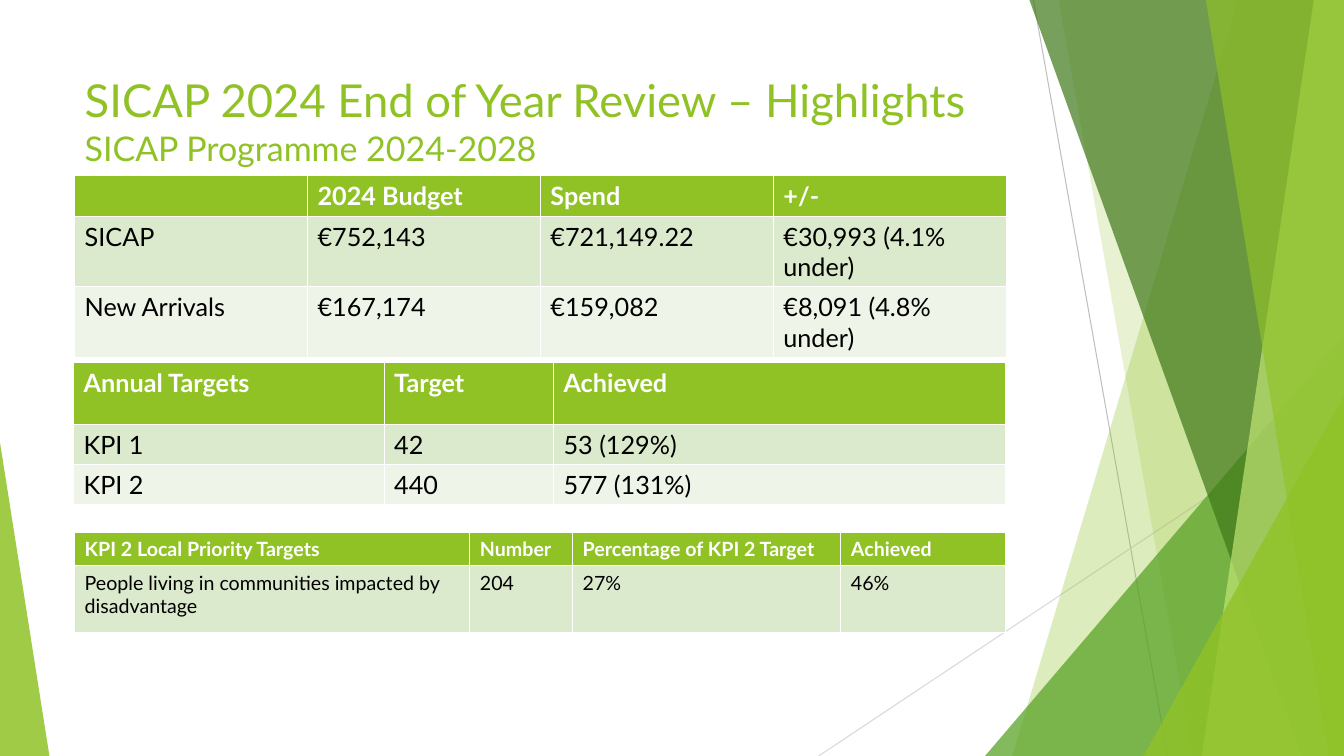
from dataclasses import dataclass

from lxml import etree
from pptx import Presentation
from pptx.dml.color import RGBColor
from pptx.enum import shapes, text
from pptx.oxml import ns
from pptx.util import Inches, Pt


@dataclass(frozen=True)
class Theme:
    font: str = "Lato"
    lime: str = "90C226"
    green: str = "54A021"
    forest: str = "3F7819"
    pale_lime: str = "C0E474"
    band_dark: str = "DBE9CD"
    band_light: str = "EEF4E8"
    white: str = "FFFFFF"
    black: str = "000000"
    dark_ray: str = "BFBFBF"
    light_ray: str = "D9D9D9"
    title_size: float = 32.4
    subtitle_size: float = 24.3
    table_size: float = 18
    small_table_size: float = 14
    ray_width: float = 0.75


THEME = Theme()
WIDTH, HEIGHT = 13.33, 7.5


def rgb(colour):
    return RGBColor.from_string(colour)


def style_run(run, size, colour, bold=False):
    run.font.name = THEME.font
    run.font.size = Pt(size)
    run.font.bold = bold
    run.font.color.rgb = rgb(colour)


def add_ray(slide, start, end, colour):
    ray = slide.shapes.add_connector(
        shapes.MSO_CONNECTOR.STRAIGHT, *map(Inches, start + end))
    ray.line.color.rgb = rgb(colour)
    ray.line.width = Pt(THEME.ray_width)
    etree.SubElement(ray.element.spPr, ns.qn("a:effectLst"))


def paint_glass(pane, colour, opacity):
    pane.shadow.inherit = False
    pane.line.fill.background()
    pane.fill.solid()
    pane.fill.fore_color.rgb = rgb(colour)
    tint = pane.element.spPr.find(ns.qn("a:solidFill"))[0]
    etree.SubElement(tint, ns.qn("a:alpha"), val=str(opacity * 1000))


def add_pane(slide, top_left, bottom_left, colour, opacity):
    corners = [(top_left, 0), (WIDTH, 0), (WIDTH, HEIGHT), (bottom_left, HEIGHT)]
    points = [(Inches(x), Inches(y)) for x, y in corners]
    outline = slide.shapes.build_freeform(*points[0])
    outline.add_line_segments(points[1:], close=True)
    paint_glass(outline.convert_to_shape(), colour, opacity)


def add_wedge(slide, left, top, width, apex, colour, opacity):
    wedge = slide.shapes.add_shape(
        shapes.MSO_SHAPE.ISOSCELES_TRIANGLE,
        Inches(left), Inches(top), Inches(width), Inches(HEIGHT - top))
    wedge.adjustments[0] = apex
    paint_glass(wedge, colour, opacity)


def add_facets(slide):
    add_ray(slide, (10.25, 0), (11.58, HEIGHT), THEME.dark_ray)
    add_ray(slide, (WIDTH, 4.03), (8.12, HEIGHT), THEME.light_ray)
    add_pane(slide, 12.28, 10.04, THEME.lime, 30)
    add_pane(slide, 10.5, 11.83, THEME.lime, 20)
    add_wedge(slide, 9.77, 3.33, 3.56, 1, THEME.green, 72)
    add_pane(slide, 10.21, 12.91, THEME.forest, 70)
    add_pane(slide, 13.03, 11.92, THEME.pale_lime, 70)
    add_pane(slide, 11.96, 13.18, THEME.lime, 65)
    add_wedge(slide, 11.34, 3.93, 1.99, 1, THEME.lime, 80)
    add_wedge(slide, 0, 4.39, 0.49, 0, THEME.lime, 85)


def set_title(slide, heading, subheading):
    title = slide.shapes.title
    slide.shapes.element.append(title.element)
    title.left, title.top = Inches(0.74), Inches(0.67)
    title.width, title.height = Inches(9.4), Inches(1.17)
    frame = title.text_frame
    frame.word_wrap = True
    frame.auto_size = text.MSO_AUTO_SIZE.NONE
    frame.vertical_anchor = text.MSO_ANCHOR.TOP
    line = frame.paragraphs[0]
    line.text = f"{heading}\v{subheading}"
    line.alignment = text.PP_ALIGN.LEFT
    line.line_spacing = 1.0
    for run, size in zip(line.runs, (THEME.title_size, THEME.subtitle_size)):
        style_run(run, size, THEME.lime)


def add_grid(slide, left, top, widths, heights, rows, size):
    grid = slide.shapes.add_table(
        len(rows), len(widths), Inches(left), Inches(top),
        Inches(sum(widths)), Inches(sum(heights))).table
    for column, width in zip(grid.columns, widths):
        column.width = Inches(width)
    for r, (row, height) in enumerate(zip(rows, heights)):
        grid.rows[r].height = Inches(height)
        header = r == 0
        band = THEME.band_dark if r % 2 else THEME.band_light
        for c, value in enumerate(row):
            cell = grid.cell(r, c)
            cell.fill.solid()
            cell.fill.fore_color.rgb = rgb(THEME.lime if header else band)
            cell.text_frame.text = value
            for run in cell.text_frame.paragraphs[0].runs:
                style_run(run, size, THEME.white if header else THEME.black, header)


def main():
    deck = Presentation()
    deck.slide_width, deck.slide_height = Inches(WIDTH), Inches(HEIGHT)
    slide = deck.slides.add_slide(deck.slide_layouts.get_by_name("Title Only"))
    add_facets(slide)
    set_title(slide, "SICAP 2024 End of Year Review – Highlights",
              "SICAP Programme 2024-2028")

    targets = [
        ("Annual Targets", "Target", "Achieved"),
        ("KPI 1", "42", "53 (129%)"),
        ("KPI 2", "440", "577 (131%)"),
    ]
    priorities = [
        ("KPI 2 Local Priority Targets", "Number", "Percentage of KPI 2 Target", "Achieved"),
        ("People living in communities impacted by disadvantage", "204", "27%", "46%"),
    ]
    budget = [
        ("", "2024 Budget", "Spend", "+/-"),
        ("SICAP", "€752,143", "€721,149.22", "€30,993 (4.1% under)"),
        ("New Arrivals", "€167,174", "€159,082", "€8,091 (4.8% under)"),
    ]
    add_grid(slide, 0.73, 3.6, (3.08, 1.68, 4.48), (0.61, 0.4, 0.4),
             targets, THEME.table_size)
    add_grid(slide, 0.74, 5.28, (3.92, 1.02, 2.66, 1.63), (0.33, 0.66),
             priorities, THEME.small_table_size)
    add_grid(slide, 0.74, 1.74, (2.31,) * 4, (0.38, 0.7, 0.7),
             budget, THEME.table_size)
    deck.save("out.pptx")


if __name__ == "__main__":
    main()
